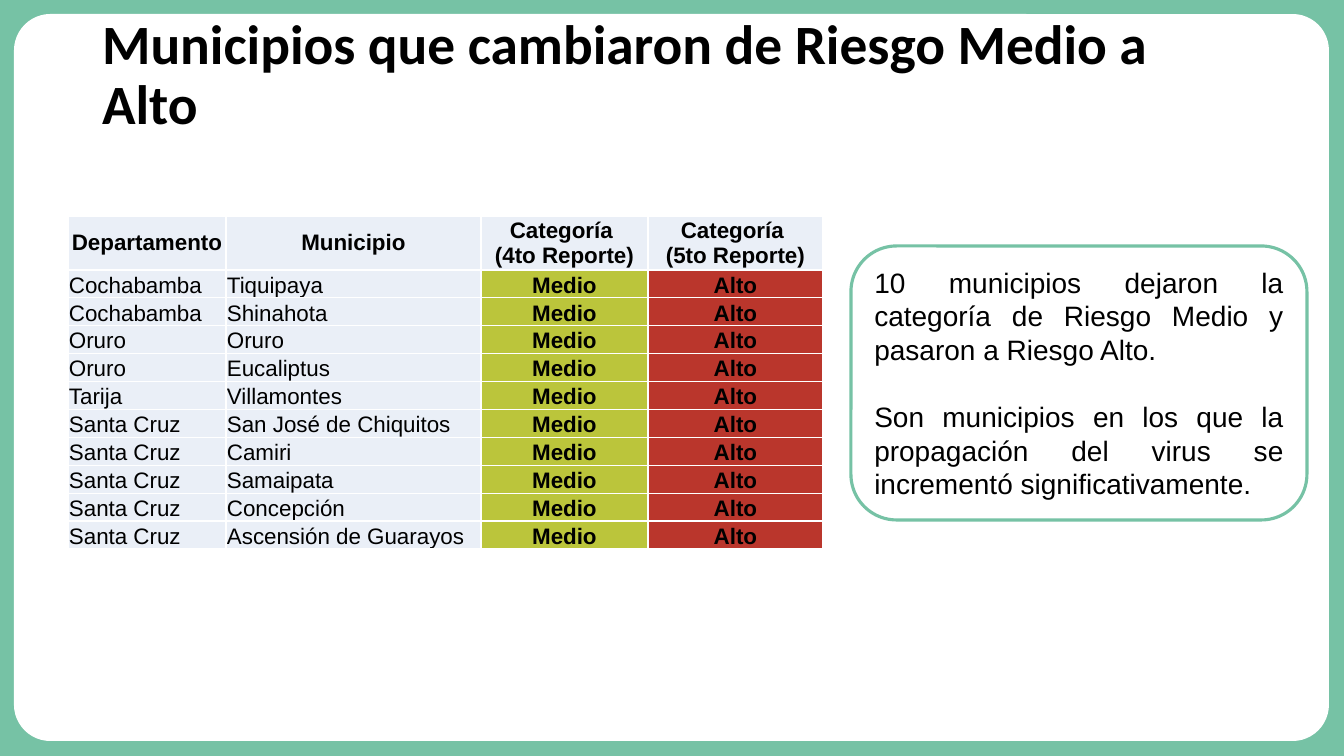
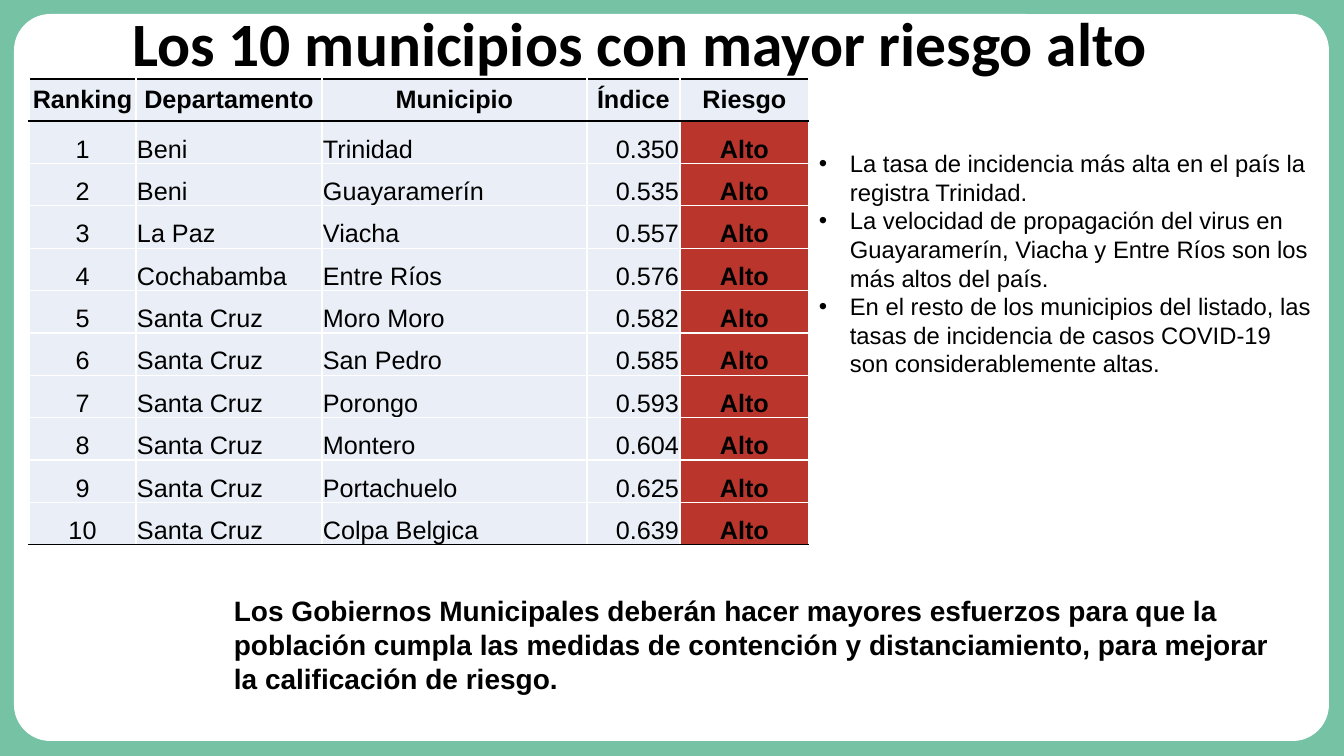
from lxml import etree
from pptx import Presentation
from pptx import util as u
from pptx.dml.color import RGBColor
from pptx.enum import shapes, text
from pptx.oxml import ns

COLORS = {"green": "76C2A5", "white": "FFFFFF", "black": "000000",
          "pale": "EAEFF7", "Medio": "BBC53B", "Alto": "BA362C"}
ALIGN = {"l": text.PP_ALIGN.LEFT, "c": text.PP_ALIGN.CENTER,
         "r": text.PP_ALIGN.RIGHT, "j": text.PP_ALIGN.JUSTIFY}
SCALE = 12192000 / 1344


def px(*lengths):
    return [u.Emu(round(length * SCALE)) for length in lengths]


def style(frame, size, bold=False, align="l", font="Arial"):
    for paragraph in frame.paragraphs:
        paragraph.alignment = ALIGN[align]
        for run in paragraph.runs:
            run.font.name = font
            run.font.size = u.Pt(size)
            run.font.bold = bold
            run.font.color.rgb = RGBColor.from_string(COLORS["black"])


pages = [
    {"title": "Municipios que cambiaron de Riesgo Medio a Alto",
     "title_at": (92, 34, 1159, 85), "title_size": 39.6,
     "corner": (68, 216), "widths": (158, 255, 167, 175), "aligns": "llcc",
     "header_height": 54, "body_height": 279, "size": 16, "ruled": False,
     "rows": [
         ("Departamento", "Municipio", "Categoría \n(4to Reporte)", "Categoría \n(5to Reporte)"),
         ("Cochabamba", "Tiquipaya", "Medio", "Alto"),
         ("Cochabamba", "Shinahota", "Medio", "Alto"),
         ("Oruro", "Oruro", "Medio", "Alto"),
         ("Oruro", "Eucaliptus", "Medio", "Alto"),
         ("Tarija", "Villamontes", "Medio", "Alto"),
         ("Santa Cruz", "San José de Chiquitos", "Medio", "Alto"),
         ("Santa Cruz", "Camiri", "Medio", "Alto"),
         ("Santa Cruz", "Samaipata", "Medio", "Alto"),
         ("Santa Cruz", "Concepción", "Medio", "Alto"),
         ("Santa Cruz", "Ascensión de Guarayos", "Medio", "Alto")]},
    {"title": "Los 10 municipios con mayor riesgo alto",
     "title_at": (122, -10, 1159, 113), "title_size": 44,
     "corner": (29, 79), "widths": (107, 186, 265, 93, 129), "aligns": "cllrc",
     "header_height": 42, "body_height": 424, "size": 18, "ruled": True,
     "rows": [
         ("Ranking", "Departamento", "Municipio", "Índice", "Riesgo"),
         ("1", "Beni", "Trinidad", "0.350", "Alto"),
         ("2", "Beni", "Guayaramerín", "0.535", "Alto"),
         ("3", "La Paz", "Viacha", "0.557", "Alto"),
         ("4", "Cochabamba", "Entre Ríos", "0.576", "Alto"),
         ("5", "Santa Cruz", "Moro Moro", "0.582", "Alto"),
         ("6", "Santa Cruz", "San Pedro", "0.585", "Alto"),
         ("7", "Santa Cruz", "Porongo", "0.593", "Alto"),
         ("8", "Santa Cruz", "Montero", "0.604", "Alto"),
         ("9", "Santa Cruz", "Portachuelo", "0.625", "Alto"),
         ("10", "Santa Cruz", "Colpa Belgica", "0.639", "Alto")]},
]

prs = Presentation()
prs.slide_width, prs.slide_height = px(1344, 756)
layout = prs.slide_layouts[5]
layout.background.fill.solid()
layout.background.fill.fore_color.rgb = RGBColor.from_string(COLORS["green"])
change, ranking = [prs.slides.add_slide(layout) for page in pages]

panel = change.shapes.add_shape(shapes.MSO_SHAPE.ROUNDED_RECTANGLE, *px(14, 14, 1315, 727))
panel.adjustments[0] = 0.05
panel.shadow.inherit = False
panel.fill.solid()
panel.fill.fore_color.rgb = RGBColor.from_string(COLORS["white"])
panel.line.fill.background()
layout.shapes.element.insert(2, panel.element)

for slide, page in zip((change, ranking), pages):
    title = slide.shapes.title
    title.left, title.top, title.width, title.height = px(*page["title_at"])
    title.text_frame.text = page["title"]
    title.text_frame.auto_size = text.MSO_AUTO_SIZE.NONE
    title.text_frame.vertical_anchor = text.MSO_ANCHOR.MIDDLE
    title.text_frame.paragraphs[0].line_spacing = 0.9
    style(title.text_frame, page["title_size"], bold=True, font="Calibri")

    rows, widths = page["rows"], page["widths"]
    last = len(rows) - 1
    height = page["header_height"] + page["body_height"]
    table = slide.shapes.add_table(len(rows), len(widths),
                                   *px(*page["corner"], sum(widths), height)).table
    for column, width in zip(table.columns, px(*widths)):
        column.width = width
    for r, row in enumerate(rows):
        header = r == 0
        table.rows[r].height = px(page["header_height"] if header else page["body_height"] / last)[0]
        for c, value in enumerate(row):
            cell = table.cell(r, c)
            cell.text_frame.text = value
            cell.margin_left = cell.margin_right = cell.margin_top = px(0 if header else 1)[0]
            cell.margin_bottom = 0
            cell.vertical_anchor = text.MSO_ANCHOR.MIDDLE if header else text.MSO_ANCHOR.BOTTOM
            style(cell.text_frame, page["size"], bold=header or value in COLORS,
                  align="c" if header else page["aligns"][c])
            dark = {"T": r in (0, 1), "B": r in (0, last)}
            for side in "LRTB":
                color = COLORS["black" if page["ruled"] and dark.get(side) else "white"]
                border = etree.SubElement(cell._tc.get_or_add_tcPr(), ns.qn(f"a:ln{side}"), w="12700")
                fill = etree.SubElement(border, ns.qn("a:solidFill"))
                etree.SubElement(fill, ns.qn("a:srgbClr"), val=color)
            cell.fill.solid()
            cell.fill.fore_color.rgb = RGBColor.from_string(COLORS.get(value, COLORS["pale"]))

callout = change.shapes.add_shape(shapes.MSO_SHAPE.ROUNDED_RECTANGLE, *px(851, 246, 456, 274))
callout.shadow.inherit = False
callout.fill.background()
callout.line.color.rgb = RGBColor.from_string(COLORS["green"])
callout.line.width = u.Pt(2.25)
callout.text_frame.word_wrap = True
callout.text_frame.text = (
    "10 municipios dejaron la categoría de Riesgo Medio y pasaron a Riesgo Alto.\n"
    "Son municipios en los que la propagación del virus se incrementó significativamente.")
callout.text_frame.paragraphs[1].space_before = u.Pt(24)
style(callout.text_frame, 20, align="j")

findings = ranking.shapes.add_textbox(*px(809, 144, 516, 241)).text_frame
findings.word_wrap = True
findings.text = (
    "La tasa de incidencia más alta en el país la registra Trinidad.\n"
    "La velocidad de propagación del virus en Guayaramerín, Viacha y Entre Ríos "
    "son los más altos del país.\n"
    "En el resto de los municipios del listado, las tasas de incidencia de casos "
    "COVID-19 son considerablemente altas.")
style(findings, 17)
indent = px(31)[0]
for paragraph in findings.paragraphs:
    properties = paragraph._p.get_or_add_pPr()
    properties.set("marL", str(indent))
    properties.set("indent", str(-indent))
    etree.SubElement(properties, ns.qn("a:buFont"), typeface="Arial")
    etree.SubElement(properties, ns.qn("a:buChar"), char="•")

appeal = ranking.shapes.add_textbox(*px(224, 589, 1064, 112)).text_frame
appeal.word_wrap = True
appeal.text = (
    "Los Gobiernos Municipales deberán hacer mayores esfuerzos para que la población "
    "cumpla las medidas de contención y distanciamiento, para mejorar la calificación de riesgo.")
style(appeal, 20, bold=True)

prs.save("out.pptx")
